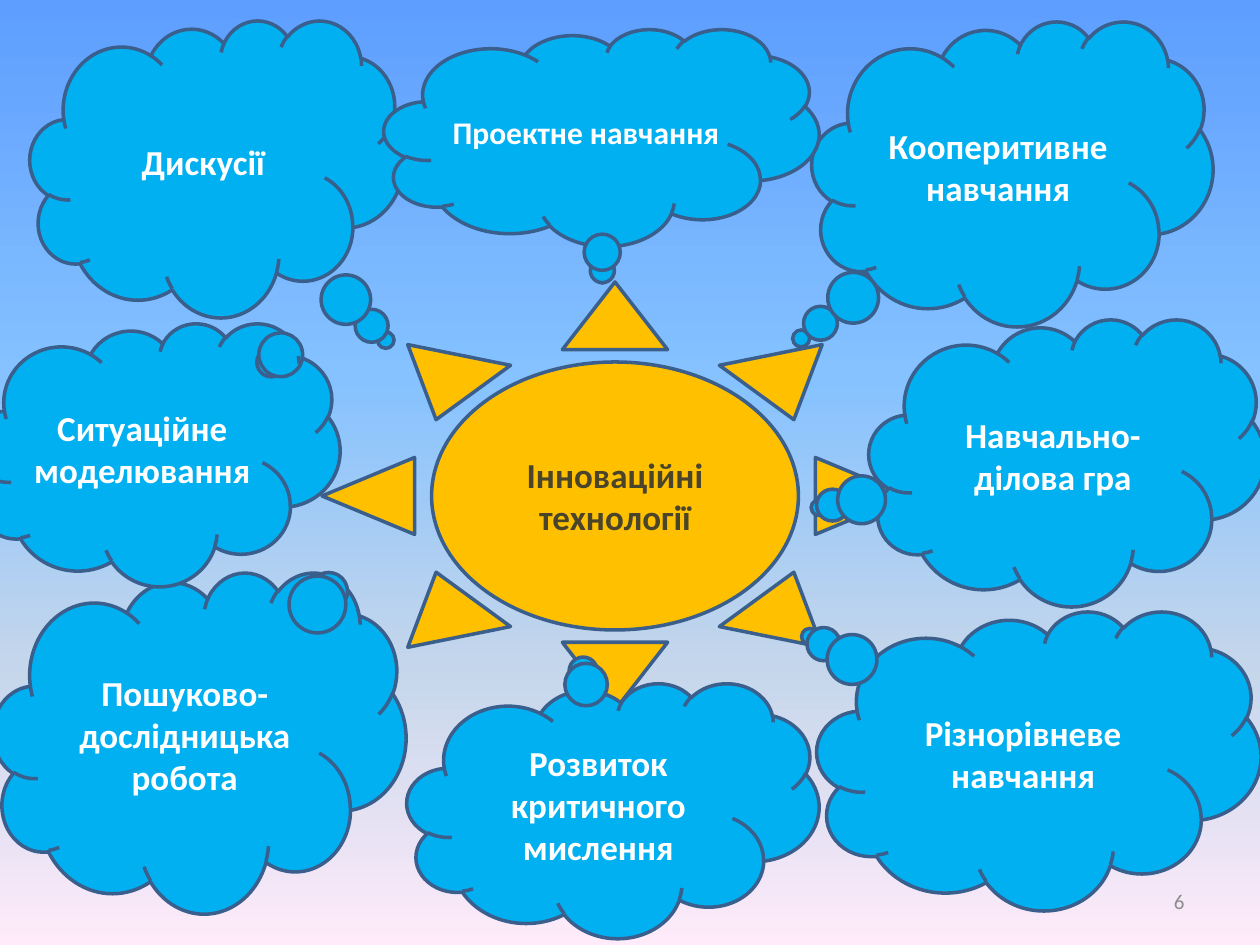
from copy import deepcopy

from pptx import Presentation
from pptx.dml.color import RGBColor
from pptx.enum.shapes import MSO_SHAPE
from pptx.enum.text import MSO_ANCHOR, PP_ALIGN
from pptx.oxml.ns import qn
from pptx.util import Emu, Pt

SUN, CLOUD = MSO_SHAPE.SUN, MSO_SHAPE.CLOUD_CALLOUT
MIDDLE = MSO_ANCHOR.MIDDLE
CENTER, RIGHT = PP_ALIGN.CENTER, PP_ALIGN.RIGHT

PX = 914400 / 126
FONT = "Calibri"
OUTLINE, SUN_FILL, CLOUD_FILL = "3A5F8C", "FFC000", "00B0F0"
SUN_TEXT, CLOUD_TEXT, NUMBER_TEXT = "4A452A", "FFFFFF", "8C8C8C"
CLOUD_MARGIN = 4

# Content: boxes are left, top, width, height in px
SKY = [(0, "5E9EFF"), (0.4, "85C2FF"), (0.7, "C4D6EB"), (1, "FFEBFA")]
CENTRE = ("Інноваційні технології", (322, 282, 586, 428))
SLIDE_NUMBER = ("6", (903, 876, 294, 50))
# Text, box, pointer offset from the cloud's centre, text size
CLOUDS = [
    ("Дискусії", (30, 20, 373, 297), (0.454, 0.578), 20),
    ("Пошуково- дослідницька робота", (-7, 572, 413, 341), (0.31, -0.439), 20),
    ("Кооперитивне навчання", (812, 21, 401, 305), (-0.527, 0.541), 20),
    ("Розвиток критичного мислення", (407, 683, 412, 255), (-0.072, -0.544), 20),
    ("Проектне навчання", (384, 29, 435, 217), (0.002, 0.643), 18),
    ("Навчально-ділова гра", (869, 319, 396, 287), (-0.626, 0.157), 20),
    ("Ситуаційне моделювання", (-29, 323, 369, 263), (0.32, -0.357), 20),
    ("Різнорівневе навчання", (817, 611, 444, 299), (-0.516, -0.414), 20),
]


def px(length):
    return Emu(round(length * PX))


def rgb(color):
    return RGBColor.from_string(color)


def write(shape, text, size, color, bold=True, align=CENTER):
    frame = shape.text_frame
    frame.word_wrap = True
    frame.vertical_anchor = MIDDLE
    frame.text = text
    paragraph = frame.paragraphs[0]
    paragraph.alignment = align
    font = paragraph.runs[0].font
    font.name, font.size, font.bold = FONT, Pt(size), bold
    font.color.rgb = rgb(color)


def add_figure(slide, kind, box, adjustments, fill):
    shape = slide.shapes.add_shape(kind, *map(px, box))
    for index, value in enumerate(adjustments):
        shape.adjustments[index] = value
    shape.shadow.inherit = False
    shape.fill.solid()
    shape.fill.fore_color.rgb = rgb(fill)
    shape.line.color.rgb = rgb(OUTLINE)
    shape.line.width = Pt(2)
    return shape


def paint_sky(slide):
    fill = slide.background.fill
    fill.gradient()
    fill.gradient_angle = 270
    stop_list = slide.element.find(".//" + qn("a:gsLst"))
    while len(stop_list) < len(SKY):
        stop_list.append(deepcopy(stop_list[0]))
    for stop, (position, color) in zip(fill.gradient_stops, SKY):
        stop.position = position
        stop.color.rgb = rgb(color)


def main():
    presentation = Presentation()
    presentation.slide_width, presentation.slide_height = px(1260), px(945)
    slide = presentation.slides.add_slide(presentation.slide_layouts[6])
    paint_sky(slide)

    # Central sun
    text, box = CENTRE
    write(add_figure(slide, SUN, box, [0.187], SUN_FILL), text, 20, SUN_TEXT)

    # Slide number
    text, box = SLIDE_NUMBER
    number = slide.shapes.add_textbox(*map(px, box))
    write(number, text, 12, NUMBER_TEXT, bold=False, align=RIGHT)

    # Clouds around the sun, with narrow margins so long words fit on a line
    for text, box, pointer, size in CLOUDS:
        cloud = add_figure(slide, CLOUD, box, pointer, CLOUD_FILL)
        write(cloud, text, size, CLOUD_TEXT)
        cloud.text_frame.margin_left = px(CLOUD_MARGIN)
        cloud.text_frame.margin_right = px(CLOUD_MARGIN)

    presentation.save("out.pptx")


if __name__ == "__main__":
    main()
